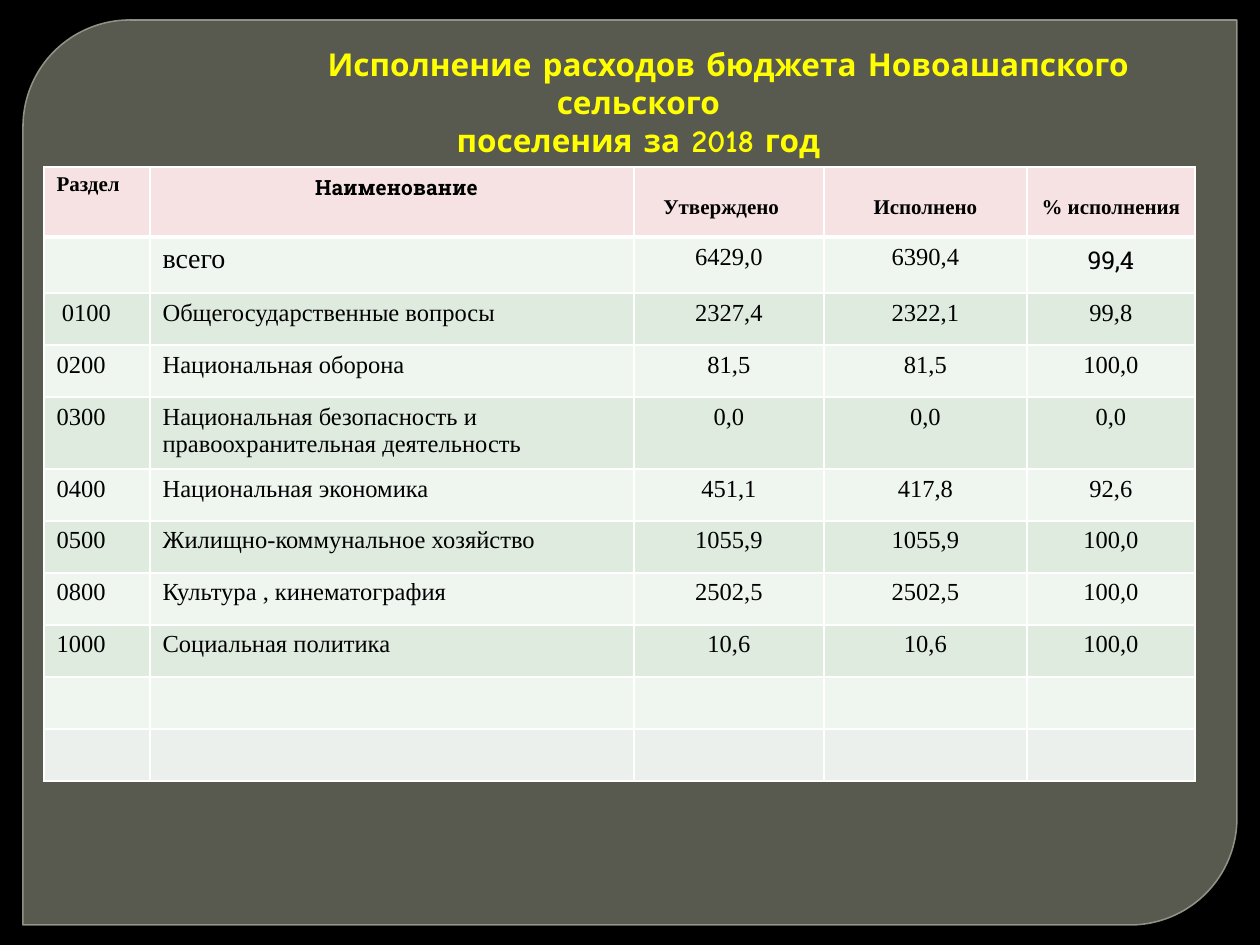
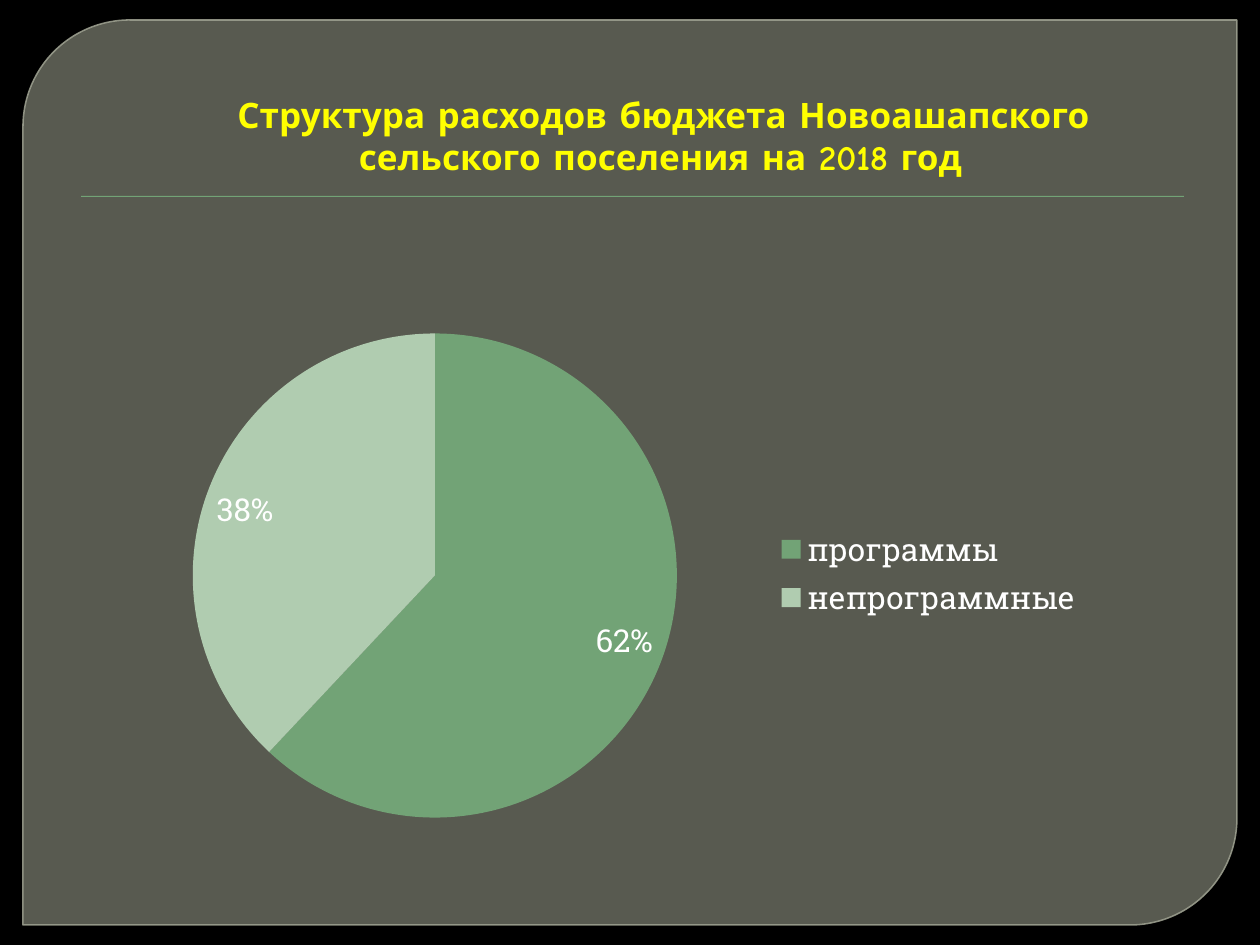
from lxml import etree
from pptx import Presentation
from pptx import util as u
from pptx.chart.data import CategoryChartData
from pptx.dml.color import RGBColor
from pptx.enum import chart as ch, shapes, text
from pptx.oxml import parse_xml
from pptx.oxml.ns import nsdecls, qn

PX = 914400 // 126
COLORS = {
    "back": "000000", "panel": "888B7B", "panel_line": "9DA090",
    "title": "FFFF00", "ink": "000000", "white": "FFFFFF",
    "green": "72A376", "pale_green": "B0CCB0",
    "head": "F6E2E2", "light": "EFF5EF", "dark": "DFEBDF", "last": "EBF0EC",
}
TITLE_FONT, SLAB, SERIF = "Comic Neue", "Roboto Slab", "Times New Roman"
PANEL_BOX = (23, 20, 1214, 905)

COL_WIDTHS = [106, 484, 190, 203, 168]
ROW_HEIGHTS = [70, 56, 52, 52, 72] + [52] * 6
HEADINGS = ["Раздел", "Наименование", "Утверждено", "Исполнено", "% исполнения"]
EXPENSES = [
    ["", "всего", "6429,0", "6390,4", "99,4"],
    ["0100", "Общегосударственные вопросы", "2327,4", "2322,1", "99,8"],
    ["0200", "Национальная оборона", "81,5", "81,5", "100,0"],
    ["0300", "Национальная безопасность и правоохранительная деятельность",
     "0,0", "0,0", "0,0"],
    ["0400", "Национальная экономика", "451,1", "417,8", "92,6"],
    ["0500", "Жилищно-коммунальное хозяйство", "1055,9", "1055,9", "100,0"],
    ["0800", "Культура , кинематография", "2502,5", "2502,5", "100,0"],
    ["1000", "Социальная политика", "10,6", "10,6", "100,0"],
    [""] * 5,
    [""] * 5,
]


def px(n):
    return u.Emu(n * PX)


def emu(box):
    return [px(n) for n in box]


def rgb(name):
    return RGBColor.from_string(COLORS[name])


def style_font(font, name, size, color, bold=False):
    font.name, font.size, font.bold = name, u.Pt(size), bold
    font.color.rgb = rgb(color)


def set_alpha(fill_parent, percent):
    color = fill_parent.find(qn("a:solidFill"))[0]
    etree.SubElement(color, qn("a:alpha"), val=str(percent * 1000))


def add_panel_slide(prs):
    """Add a slide with the black background and the rounded panel."""
    s = prs.slides.add_slide(prs.slide_layouts[6])
    s.background.fill.solid()
    s.background.fill.fore_color.rgb = rgb("back")
    sp = s.shapes.add_shape(shapes.MSO_SHAPE.ROUND_2_DIAG_RECTANGLE, *emu(PANEL_BOX))
    sp.shadow.inherit = False
    sp.adjustments[0], sp.adjustments[1] = 0.118, 0
    sp.fill.solid()
    sp.fill.fore_color.rgb = rgb("panel")
    sp.line.color.rgb = rgb("panel_line")
    sp.line.width = u.Pt(0.87)
    set_alpha(sp.fill._xPr, 65)
    set_alpha(sp.line._ln, 88)
    return s


def add_title(s, box, lines, size, margin, indent):
    """Add a centred title; indent shifts only its first line."""
    tf = s.shapes.add_textbox(*emu(box)).text_frame
    tf.word_wrap = True
    tf.vertical_anchor = text.MSO_ANCHOR.BOTTOM
    p = tf.paragraphs[0]
    p.text = "\v".join(lines)
    p.alignment = text.PP_ALIGN.CENTER
    style_font(p.font, TITLE_FONT, size, "title", True)
    pPr = p._p.get_or_add_pPr()
    pPr.set("marL", str(px(margin)))
    pPr.set("indent", str(px(indent)))


def add_title_rule(s, box):
    sp = s.shapes.add_shape(shapes.MSO_SHAPE.RECTANGLE, *emu(box))
    sp.shadow.inherit = False
    sp.fill.solid()
    sp.fill.fore_color.rgb = rgb("green")
    sp.line.fill.background()


def set_borders(cell, bottom_pt):
    tcPr = cell._tc.get_or_add_tcPr()
    for side, width in zip("LRTB", (1, 1, 1, bottom_pt)):
        tcPr.append(parse_xml(
            f'<a:ln{side} {nsdecls("a")} w="{u.Pt(width)}"><a:solidFill>'
            f'<a:srgbClr val="{COLORS["white"]}"/></a:solidFill></a:ln{side}>'))


def fill_cell(cell, content, fill, centered, size=14, font=SERIF, bold=False, bottom_pt=1):
    set_borders(cell, bottom_pt)
    cell.fill.solid()
    cell.fill.fore_color.rgb = rgb(fill)
    p = cell.text_frame.paragraphs[0]
    p.text = content
    p.alignment = text.PP_ALIGN.CENTER if centered else text.PP_ALIGN.LEFT
    style_font(p.font, font, size, "ink", bold)


def add_expense_table(s, left, top):
    box = (left, top, sum(COL_WIDTHS), sum(ROW_HEIGHTS))
    table = s.shapes.add_table(len(ROW_HEIGHTS), len(COL_WIDTHS), *emu(box)).table
    table.first_row = table.horz_banding = False
    for col, width in zip(table.columns, COL_WIDTHS):
        col.width = px(width)
    for row, height in zip(table.rows, ROW_HEIGHTS):
        row.height = px(height)

    for c, heading in enumerate(HEADINGS):
        cell = table.cell(0, c)
        fill_cell(cell, heading, "head", c > 0, 12, SLAB if c == 1 else SERIF, True, 3)
        if c > 1:
            cell.margin_top = px(29)
    table.cell(0, 1).margin_left = px(22)
    table.cell(0, 2).margin_right = px(28)

    fills = ["light", "dark"] * 4 + ["light", "last"]
    for r, (values, fill) in enumerate(zip(EXPENSES, fills), 1):
        for c, value in enumerate(values):
            fill_cell(table.cell(r, c), value, fill, c > 1,
                      size=16 if (r, c) == (1, 1) else 14,
                      font=SLAB if (r, c) == (1, 4) else SERIF)
    table.cell(2, 0).margin_left = px(18)


def set_plot_layout(chart, x, y, w, h):
    """Fix the inner plot area as fractions of the chart."""
    area = chart._chartSpace.chart.plotArea
    for old in area.findall(qn("c:layout")):
        area.remove(old)
    places = "".join(f'<c:{tag} val="{val}"/>' for tag, val in
                     [("xMode", "edge"), ("yMode", "edge"),
                      ("x", x), ("y", y), ("w", w), ("h", h)])
    area.insert(0, parse_xml(
        f'<c:layout {nsdecls("c")}><c:manualLayout><c:layoutTarget val="inner"/>'
        f'{places}</c:manualLayout></c:layout>'))


def add_structure_pie(s, box):
    data = CategoryChartData(number_format="0%")
    data.categories = ["программы", "непрограммные"]
    data.add_series("Series 1", [0.62, 0.38])
    chart = s.shapes.add_chart(ch.XL_CHART_TYPE.PIE, *emu(box), data).chart
    chart.has_title = False
    style_font(chart.font, SLAB, 18, "white")
    chart.has_legend = True
    chart.legend.position = ch.XL_LEGEND_POSITION.RIGHT
    chart.legend.include_in_layout = False
    set_plot_layout(chart, 0.133, 0.098, 0.465, 0.811)

    plot = chart.plots[0]
    plot.vary_by_categories = True
    for i, color in enumerate(["green", "pale_green"]):
        point = plot.series[0].points[i]
        point.format.fill.solid()
        point.format.fill.fore_color.rgb = rgb(color)
        point.format.line.fill.background()
    plot.has_data_labels = True
    labels = plot.data_labels
    labels.show_value = True
    labels.show_percentage = False
    labels.number_format, labels.number_format_is_linked = "0%", False
    labels.position = ch.XL_LABEL_POSITION.INSIDE_END
    style_font(labels.font, SLAB, 18, "white")


def build_expense_slide(prs):
    s = add_panel_slide(prs)
    add_title(s, (44, 116, 1181, 49),
              ["Исполнение расходов бюджета Новоашапского", "сельского",
               "поселения за 2018 год"], 18, 8, 180)
    add_expense_table(s, 44, 167)


def build_structure_slide(prs):
    s = add_panel_slide(prs)
    add_title_rule(s, (81, 196, 1103, 1))
    add_title(s, (104, 55, 1093, 129),
              ["Структура расходов бюджета Новоашапского",
               "сельского поселения на 2018 год"], 20, 20, 6)
    add_structure_pie(s, (54, 275, 1042, 597))


def main():
    prs = Presentation()
    prs.slide_width, prs.slide_height = px(1260), px(945)
    build_expense_slide(prs)
    build_structure_slide(prs)
    prs.save("out.pptx")


if __name__ == "__main__":
    main()
